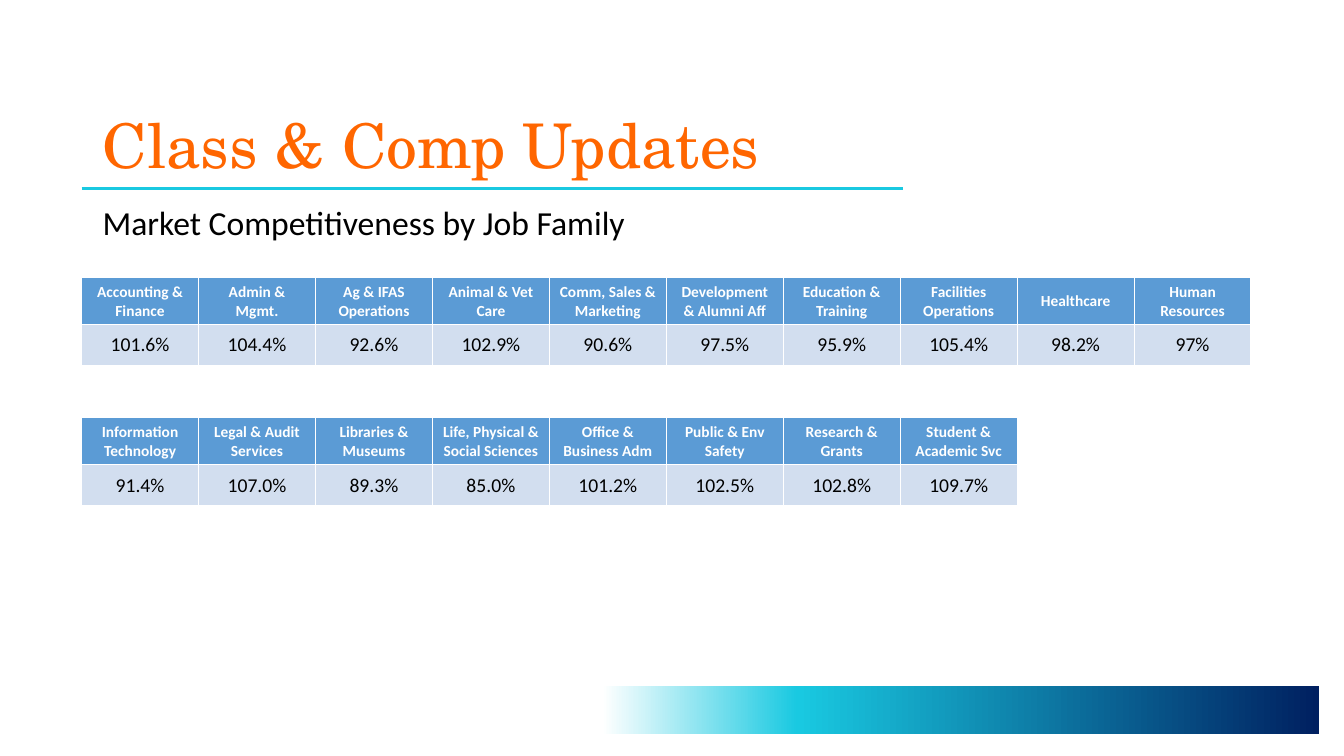
import copy
import pptx
import pptx.util
import pptx.dml.color
import pptx.enum.shapes
import pptx.enum.text
import pptx.oxml
import pptx.oxml.ns

Inches = pptx.util.Inches
Pt = pptx.util.Pt
RGB = pptx.dml.color.RGBColor.from_string
ALIGN = pptx.enum.text.PP_ALIGN
ANCHOR = pptx.enum.text.MSO_ANCHOR
qn = pptx.oxml.ns.qn

COLORS = {
    "orange": "FF6600",
    "cyan": "19C9E1",
    "navy": "002060",
    "header": "5B9BD5",
    "value": "D2DEEF",
    "white": "FFFFFF",
    "black": "000000",
}


def add_text(p, text, size, color, font="Calibri", bold=False, align=ALIGN.LEFT):
    p.alignment = align
    r = p.add_run()
    r.text = text
    r.font.size = Pt(size)
    r.font.name = font
    r.font.bold = bold
    r.font.color.rgb = RGB(COLORS[color])


prs = pptx.Presentation()
prs.slide_width = Inches(13.33)
prs.slide_height = Inches(7.5)
s = prs.slides.add_slide(prs.slide_layouts[6])

headings = [
    ("Class & Comp Updates", 0.4, 1.45, ANCHOR.BOTTOM, 44, "orange", "TeX Gyre Schola"),
    ("Market Competitiveness by Job Family", 2, 0.6, ANCHOR.TOP, 24, "black", "Calibri"),
]
for text, top, height, anchor, size, color, font in headings:
    tf = s.shapes.add_textbox(Inches(0.92), Inches(top), Inches(11.5), Inches(height)).text_frame
    tf.word_wrap = True
    tf.vertical_anchor = anchor
    p = tf.paragraphs[0]
    p.line_spacing = 0.9
    add_text(p, text, size, color, font)

rule = s.shapes.add_connector(
    pptx.enum.shapes.MSO_CONNECTOR.STRAIGHT, Inches(0.81), Inches(1.87), Inches(8.96), Inches(1.87))
rule.line.color.rgb = RGB(COLORS["cyan"])
rule.line.width = Pt(2)
rule._element.spPr.append(pptx.oxml.parse_xml(f'<a:effectLst {pptx.oxml.ns.nsdecls("a")}/>'))

band = s.shapes.add_shape(
    pptx.enum.shapes.MSO_SHAPE.RECTANGLE, Inches(5.9), Inches(6.81), Inches(7.18), Inches(0.47))
band.shadow.inherit = False
band.line.fill.background()
band.fill.gradient()
band.fill.gradient_angle = 180
stops = band._element.spPr.find(".//" + qn("a:gsLst"))
stops.append(copy.deepcopy(stops[-1]))
for stop, (position, color) in zip(
        band.fill.gradient_stops, [(0, "navy"), (0.72, "cyan"), (0.99, "white")]):
    stop.position = position
    stop.color.rgb = RGB(COLORS[color])

tables = [
    (2.75, [
        ("Accounting & Finance", "101.6%"),
        ("Admin & Mgmt.", "104.4%"),
        ("Ag & IFAS Operations", "92.6%"),
        ("Animal & Vet Care", "102.9%"),
        ("Comm, Sales & Marketing", "90.6%"),
        ("Development & Alumni Aff", "97.5%"),
        ("Education & Training", "95.9%"),
        ("Facilities Operations", "105.4%"),
        ("Healthcare", "98.2%"),
        ("Human Resources", "97%"),
    ]),
    (4.14, [
        ("Information Technology", "91.4%"),
        ("Legal & Audit Services", "107.0%"),
        ("Libraries & Museums", "89.3%"),
        ("Life, Physical & Social Sciences", "85.0%"),
        ("Office & Business Adm", "101.2%"),
        ("Public & Env Safety", "102.5%"),
        ("Research & Grants", "102.8%"),
        ("Student & Academic Svc", "109.7%"),
    ]),
]
row_styles = [
    dict(size=11, color="white", bold=True),
    dict(size=14, color="black"),
]
for top, families in tables:
    table = s.shapes.add_table(
        2, len(families), Inches(0.81), Inches(top), Inches(1.16 * len(families)), Inches(0.88)).table
    table.rows[0].height = Inches(0.47)
    table.rows[1].height = Inches(0.41)
    for c, family in enumerate(families):
        for i, (text, style, fill) in enumerate(zip(family, row_styles, ["header", "value"])):
            cell = table.cell(i, c)
            cell.vertical_anchor = ANCHOR.MIDDLE
            add_text(cell.text_frame.paragraphs[0], text, align=ALIGN.CENTER, **style)
            for side in "LRTB":
                cell._tc.get_or_add_tcPr().append(pptx.oxml.parse_xml(
                    f'<a:ln{side} {pptx.oxml.ns.nsdecls("a")} w="{Pt(1)}"><a:solidFill>'
                    f'<a:srgbClr val="{COLORS["white"]}"/></a:solidFill></a:ln{side}>'))
            cell.fill.solid()
            cell.fill.fore_color.rgb = RGB(COLORS[fill])

prs.save("out.pptx")
